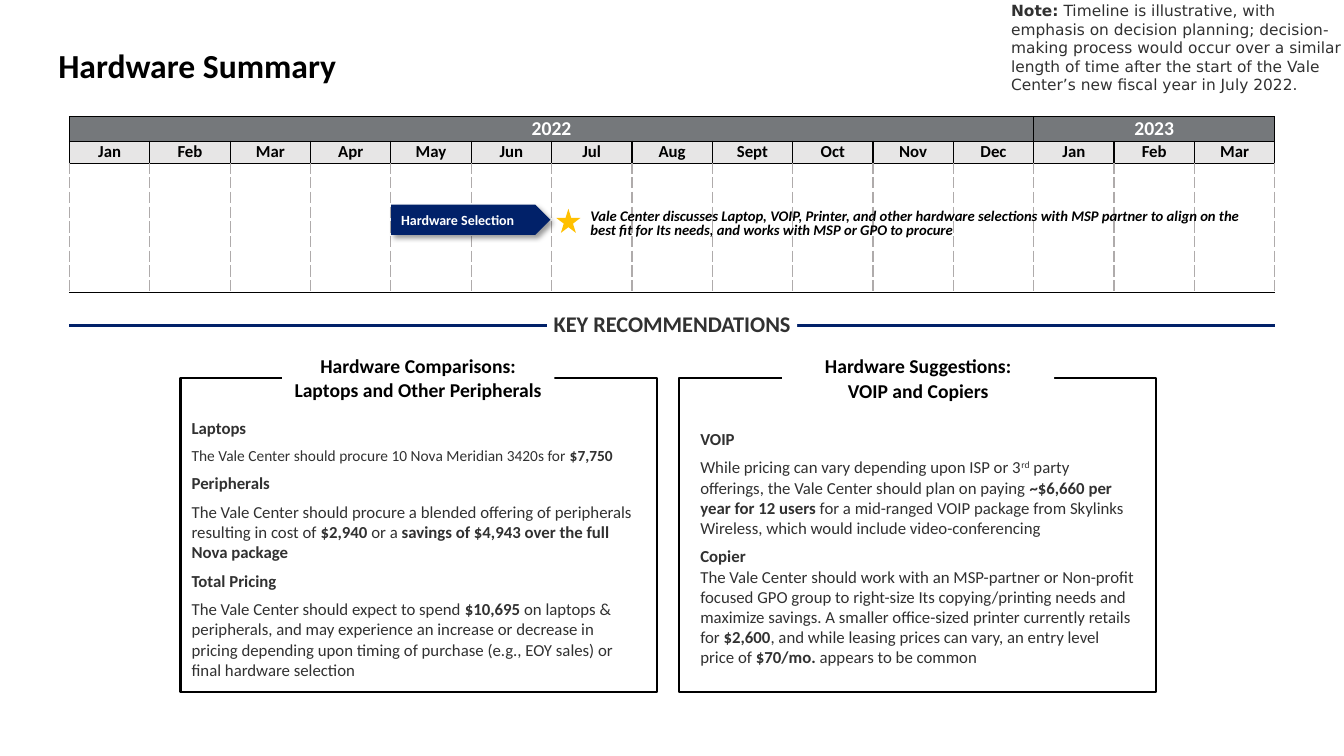
from lxml import etree
from pptx import Presentation
from pptx.dml import color
from pptx.enum import dml, shapes, text
from pptx.oxml import ns
from pptx.util import Cm, Pt

BLACK, WHITE, NAVY, INK = "000000", "FFFFFF", "012169", "313131"
GRAY, PALE, DASH, GOLD = "75787B", "E7E6E6", "AFABAB", "FFC000"
MONTHS = "Jan Feb Mar Apr May Jun Jul Aug Sept Oct Nov Dec Jan Feb Mar".split()
LEFT, RIGHT = 1.75, 32.13

LAPTOP_ADVICE = [
    (12, [("Laptops", "b")]),
    (11, [("The Vale Center should procure 10 Nova Meridian 3420s for ", ""), ("$7,750", "b")]),
    (12, [("Peripherals", "b")]),
    (12, [("The Vale Center should procure a blended offering of peripherals resulting in cost of ", ""),
          ("$2,940 ", "b"), ("or a ", ""),
          ("savings of $4,943 over the full Nova package", "b")]),
    (12, [("Total Pricing", "b")]),
    (12, [("The Vale Center should expect to spend ", ""), ("$10,695 ", "b"),
          ("on laptops & peripherals, and may experience an increase or decrease in pricing "
           "depending upon timing of purchase (e.g., EOY sales) or final hardware selection", "")]),
]
VOIP_ADVICE = [
    (12, [("VOIP", "b")]),
    (12, [("While pricing can vary depending upon ISP or 3", ""), ("rd", "^"),
          (" party offerings, the Vale Center should plan on paying ", ""),
          ("~$6,660 per year for 12 users", "b"),
          (" for a mid-ranged VOIP package from Skylinks Wireless, "
           "which would include video-conferencing", "")]),
    (12, [("Copier\n", "b"),
          ("The Vale Center should work with an MSP-partner or Non-profit focused GPO group to "
           "right-size Its copying/printing needs and maximize savings. A smaller office-sized "
           "printer currently retails for ", ""), ("$2,600", "b"),
          (", and while leasing prices can vary, an entry level price of ", ""),
          ("$70/mo.", "b"), (" appears to be common", "")]),
]
NOTE = [(11, [("Note:", "b"),
              (" Timeline is illustrative, with emphasis on decision planning; decision-making "
               "process would occur over a similar length of time after the start of the Vale "
               "Center’s new fiscal year in July 2022.", "")])]
DISCUSSION = [(10.5, [("Vale Center discusses Laptop, VOIP, Printer, and other hardware selections "
                       "with MSP partner to align on the best fit for Its needs, and works with "
                       "MSP or GPO to procure", "bi")])]


def rgb(value):
    """Turn a hex string into a colour."""
    return color.RGBColor.from_string(value)


def paint(fill, value):
    """Give a fill one solid colour."""
    fill.solid()
    fill.fore_color.rgb = rgb(value)


def add_span(para, words, style, size, ink, font):
    """Add one run; style letters are b, i and ^ for superscript."""
    span = para.add_run()
    span.text = words
    span.font.name, span.font.size = font, Pt(size)
    span.font.bold, span.font.italic = "b" in style, "i" in style
    span.font.color.rgb = rgb(ink)
    if "^" in style:
        span.font._element.set("baseline", "30000")


def write(frame, paragraphs, ink=BLACK, font="Calibri", centred=False, leading=None):
    """Write sized paragraphs of styled runs into a text frame."""
    for index, (size, spans) in enumerate(paragraphs):
        para = frame.paragraphs[0] if index == 0 else frame.add_paragraph()
        para.alignment = text.PP_ALIGN.CENTER if centred else text.PP_ALIGN.LEFT
        para.space_before = Pt(6 if index else 0)
        if leading:
            para.line_spacing = leading
        for words, style in spans:
            for number, line in enumerate(words.split("\n")):
                if number:
                    para.add_line_break()
                if line:
                    add_span(para, line, style, size, ink, font)


def set_frame(frame, inset_x=0, inset_y=0, middle=False):
    """Set wrapping, insets and anchor of a text frame."""
    frame.word_wrap = True
    frame.margin_left = frame.margin_right = Cm(inset_x)
    frame.margin_top = frame.margin_bottom = Cm(inset_y)
    frame.vertical_anchor = text.MSO_ANCHOR.MIDDLE if middle else text.MSO_ANCHOR.TOP
    return frame


def add_text(page, place, paragraphs, inset=(0, 0), **style):
    """Add a text box."""
    box = page.shapes.add_textbox(*map(Cm, place))
    write(set_frame(box.text_frame, *inset), paragraphs, **style)


def add_box(page, kind, place, fill=None, outline=None):
    """Add a flat preset shape."""
    box = page.shapes.add_shape(kind, *map(Cm, place))
    box.shadow.inherit = False
    if fill:
        paint(box.fill, fill)
    else:
        box.fill.background()
    if outline:
        box.line.color.rgb = rgb(outline)
        box.line.width = Pt(1.5)
    else:
        box.line.fill.background()
    return box


def add_label(page, place, words, size, inset=0, ink=BLACK, leading=None):
    """Add a white rectangle with a centred bold heading."""
    box = add_box(page, shapes.MSO_SHAPE.RECTANGLE, place, WHITE)
    frame = set_frame(box.text_frame, inset, inset, middle=inset > 0)
    write(frame, [(size, [(words, "b")])], ink, centred=True, leading=leading)


def add_panel(page, left, heading, heading_place, advice, advice_place):
    """Add an outlined panel with its heading and advice."""
    add_box(page, shapes.MSO_SHAPE.RECTANGLE, (left, 9.53, 12.01, 7.92), outline=BLACK)
    add_label(page, heading_place, heading, 14, inset=0.25, leading=1.06)
    add_text(page, advice_place, advice, ink=INK)


def add_arrow(page):
    """Add the shadowed timeline arrow."""
    arrow = add_box(page, shapes.MSO_SHAPE.PENTAGON, (9.86, 5.16, 4.01, 0.76), NAVY)
    frame = set_frame(arrow.text_frame, 0.25, 0.13, middle=True)
    write(frame, [(10, [("Hardware Selection", "b")])], WHITE)
    effects = arrow._element.spPr.find(ns.qn("a:effectLst"))
    shadow = etree.SubElement(effects, ns.qn("a:outerShdw"), blurRad=str(Pt(4)),
                              dist=str(Pt(3)), dir="2700000", algn="tl", rotWithShape="0")
    shade = etree.SubElement(shadow, ns.qn("a:srgbClr"), val=BLACK)
    etree.SubElement(shade, ns.qn("a:alpha"), val="40000")


def add_rule(page, top):
    """Add the navy divider."""
    rule = page.shapes.add_connector(shapes.MSO_CONNECTOR.STRAIGHT,
                                     Cm(LEFT), Cm(top), Cm(RIGHT), Cm(top))
    rule.line.color.rgb = rgb(NAVY)
    rule.line.width = Pt(2.25)
    etree.SubElement(rule._element.spPr, ns.qn("a:effectLst"))


def style_cell(cell, fill, dashed=False):
    """Set borders, fill, insets and anchor of a cell."""
    props = cell._tc.get_or_add_tcPr()
    for side in "LRTB":
        broken = dashed and side in "LR"
        line = etree.SubElement(props, ns.qn(f"a:ln{side}"), w=str(Pt(1)))
        solid = etree.SubElement(line, ns.qn("a:solidFill"))
        etree.SubElement(solid, ns.qn("a:srgbClr"), val=DASH if broken else BLACK)
        etree.SubElement(line, ns.qn("a:prstDash"), val="dash" if broken else "solid")
    paint(cell.fill, fill)
    cell.margin_left = cell.margin_right = cell.margin_top = cell.margin_bottom = 0
    cell.vertical_anchor = text.MSO_ANCHOR.MIDDLE


def add_timeline(page):
    """Add the table of years and months."""
    heights = (0.62, 0.55, 3.27)
    table = page.shapes.add_table(3, len(MONTHS), Cm(LEFT), Cm(2.94),
                                  Cm(RIGHT - LEFT), Cm(sum(heights))).table
    table.first_row = table.horz_banding = False
    for row, height in zip(table.rows, heights):
        row.height = Cm(height)
    for index, month in enumerate(MONTHS):
        table.columns[index].width = Cm((RIGHT - LEFT) / len(MONTHS))
        for row, fill in enumerate((GRAY, PALE, WHITE)):
            style_cell(table.cell(row, index), fill, dashed=row == 2)
        write(table.cell(1, index).text_frame, [(12, [(month, "b")])], centred=True)
    for year, first, last in (("2022", 0, 11), ("2023", 12, 14)):
        table.cell(0, first).merge(table.cell(0, last))
        write(table.cell(0, first).text_frame, [(14, [(year, "b")])], WHITE, centred=True)


def main():
    """Build and save the slide."""
    deck = Presentation()
    deck.slide_width, deck.slide_height = Cm(33.87), Cm(19.05)
    page = deck.slides.add_slide(deck.slide_layouts[6])
    paint(page.background.fill, WHITE)
    add_text(page, (1.47, 1.12, 23, 1.93), [(24, [("Hardware Summary", "b")])])
    add_timeline(page)
    add_arrow(page)
    add_text(page, (14.63, 5.16, 17.42, 0.99), DISCUSSION, (0.25, 0.13), leading=0.8)
    add_box(page, shapes.MSO_SHAPE.STAR_5_POINT, (14.02, 5.26, 0.61, 0.61), GOLD)
    add_panel(page, 4.55, "Hardware Comparisons:\nLaptops and Other Peripherals",
              (7.11, 8.99, 6.86, 1.02), LAPTOP_ADVICE, (4.83, 10.52, 11.4, 6.68))
    add_panel(page, 17.12, "Hardware Suggestions:\nVOIP and Copiers",
              (19.71, 8.94, 6.86, 1.14), VOIP_ADVICE, (17.65, 10.8, 10.97, 6.07))
    add_rule(page, 8.2)
    add_label(page, (13.79, 7.82, 6.3, 0.69), "KEY RECOMMENDATIONS", 16, ink=INK)
    add_text(page, (25.48, 0.03, 8.38, 2.36), NOTE, ink=INK, font="DejaVu Sans")
    deck.save("out.pptx")


if __name__ == "__main__":
    main()
